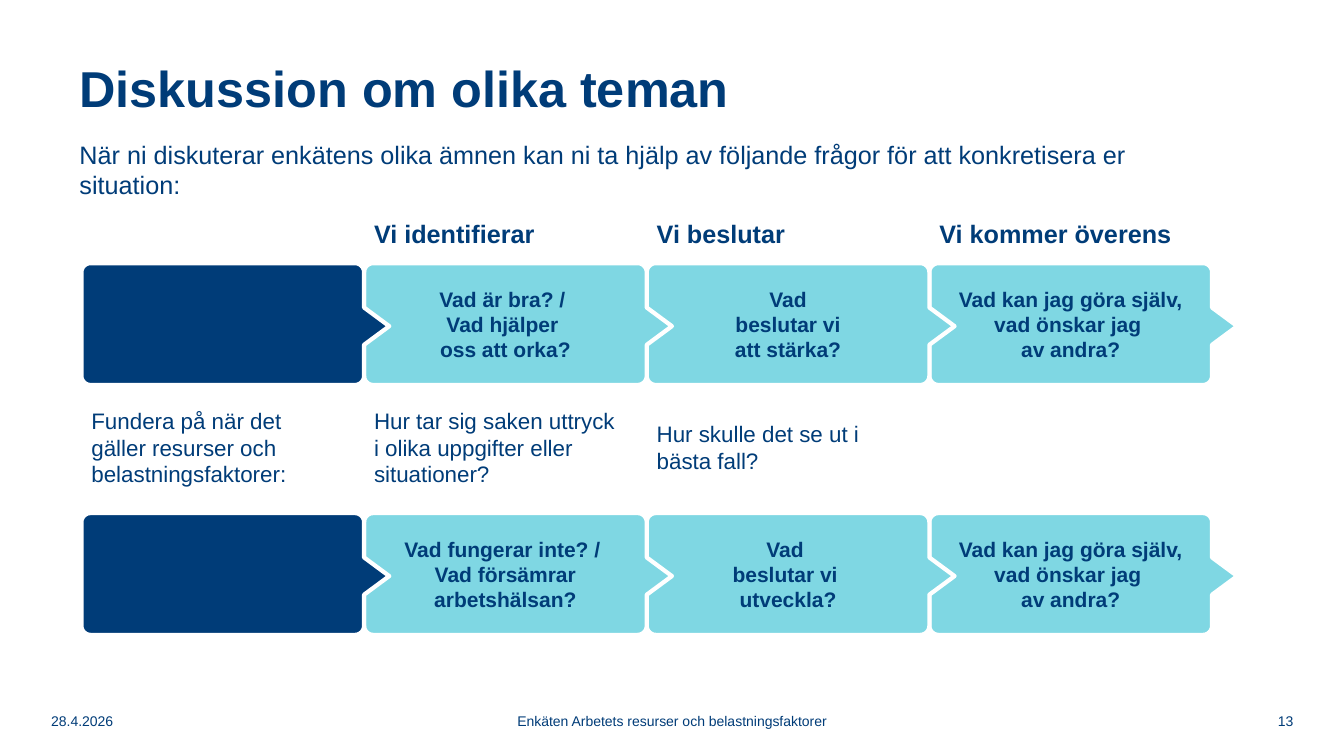
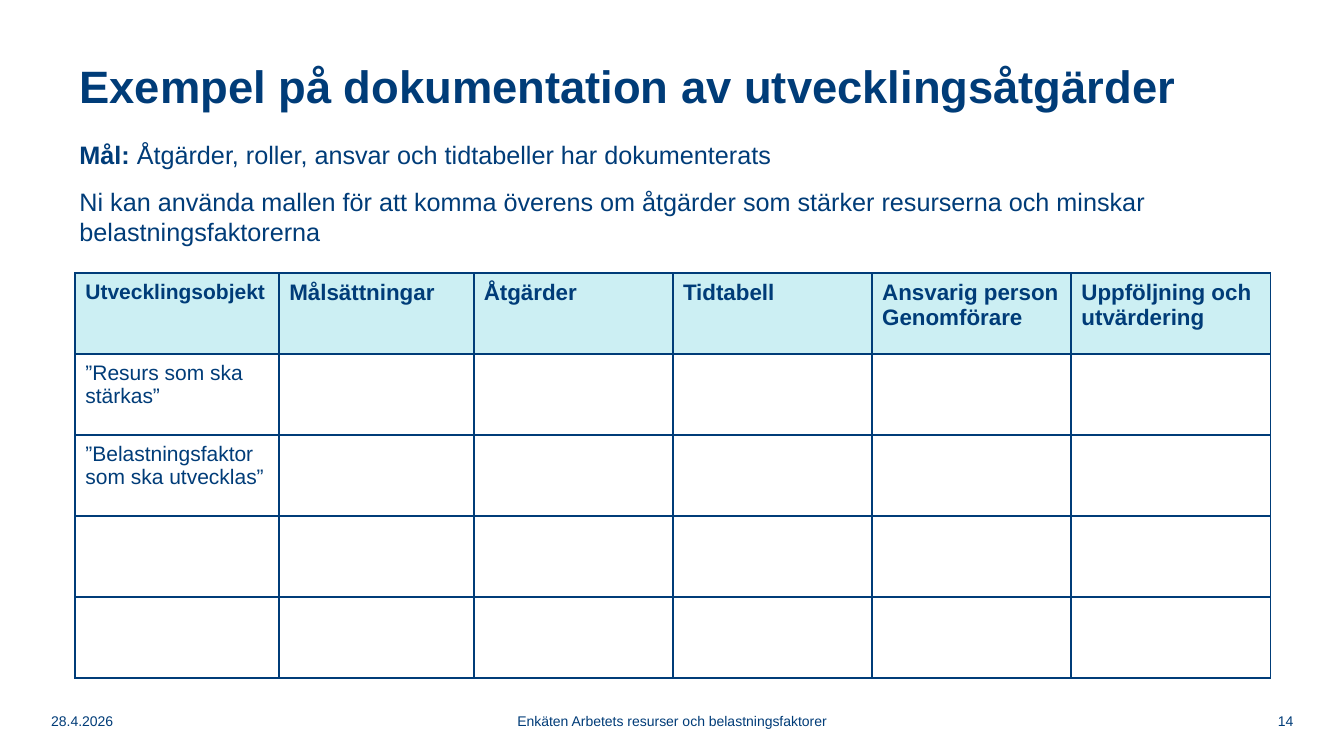
from dataclasses import dataclass
from math import cos, radians, sin
from typing import Optional

from lxml import etree
from pptx import Presentation
from pptx.dml.color import RGBColor
from pptx.enum.text import MSO_ANCHOR, PP_ALIGN
from pptx.oxml.ns import qn
from pptx.util import Pt

LEFT, CENTER, RIGHT = PP_ALIGN.LEFT, PP_ALIGN.CENTER, PP_ALIGN.RIGHT
TOP, MIDDLE = MSO_ANCHOR.TOP, MSO_ANCHOR.MIDDLE

# Shared look
FONT = "Arial"
NAVY, AQUA, PALE, WHITE = "003C78", "7FD7E3", "CCEFF3", "FFFFFF"
MARGIN = 49.7
DATE = "28.4.2026"
FOOTER = "Enkäten Arbetets resurser och belastningsfaktorer"

# Arrow grid
GRID_LEFT, PITCH = 58.2, 201.9
BOX_HEIGHT, RADIUS = 87, 6.5
TIP_LENGTH, TIP_HALF, TIP_MIDDLE = 18, 13.3, 45


@dataclass(frozen=True)
class Area:
    left: float
    top: float
    width: float
    height: float

    def points(self) -> tuple:
        return Pt(self.left), Pt(self.top), Pt(self.width), Pt(self.height)


@dataclass(frozen=True)
class TextStyle:
    size: float
    bold: bool = False
    align: PP_ALIGN = LEFT
    anchor: MSO_ANCHOR = TOP
    line_spacing: Optional[float] = None
    space_after: float = 0


@dataclass(frozen=True)
class ArrowRow:
    top: float
    questions: tuple[str, ...]


@dataclass(frozen=True)
class FooterPart:
    left: float
    width: float
    align: PP_ALIGN


BODY = TextStyle(18)
STEP_HEADING = TextStyle(18, bold=True)
QUESTION = TextStyle(15, bold=True, align=CENTER, anchor=MIDDLE)
HINT = TextStyle(16, anchor=MIDDLE)
FOOTER_PARTS = (
    FooterPart(29.5, 216, LEFT),
    FooterPart(318, 324, CENTER),
    FooterPart(715, 216, RIGHT),
)

# Content
STEP_HEADINGS = ("Vi identifierar", "Vi beslutar", "Vi kommer överens")
AGREEMENT = "Vad kan jag göra själv,\nvad önskar jag \nav andra?"
ARROW_ROWS = (
    ArrowRow(188, ("", "Vad är bra? / \nVad hjälper \noss att orka?",
                   "Vad\nbeslutar vi\natt stärka?", AGREEMENT)),
    ArrowRow(366.5, ("", "Vad fungerar inte? / \nVad försämrar\narbetshälsan?",
                     "Vad \nbeslutar vi \nutveckla?", AGREEMENT)),
)
HINTS = (
    "Fundera på när det gäller resurser och belastningsfaktorer:",
    "Hur tar sig saken uttryck i olika uppgifter eller situationer?",
    "Hur skulle det se ut i bästa fall?",
)
PLAN_HEADINGS = ("Utvecklingsobjekt", "Målsättningar", "Åtgärder", "Tidtabell",
                 "Ansvarig person\nGenomförare", "Uppföljning och utvärdering")
PLAN_OBJECTS = ("”Resurs som ska stärkas”",
                "”Belastningsfaktor som ska utvecklas”", "", "")
PLAN_WIDTHS = (145.7, 138.9, 142.3, 142.3, 142.3, 142.3)
PLAN_ROW_HEIGHT = 57.9


def rgb(color: str) -> RGBColor:
    return RGBColor.from_string(color)


def paint(target, color: str) -> None:
    target.fill.solid()
    target.fill.fore_color.rgb = rgb(color)


def format_run(run, size: float, bold: bool) -> None:
    run.font.name = FONT
    run.font.size = Pt(size)
    run.font.bold = bold
    run.font.color.rgb = rgb(NAVY)


def write(frame, text: str, style: TextStyle) -> None:
    frame.text = text
    frame.word_wrap = True
    frame.vertical_anchor = style.anchor
    for paragraph in frame.paragraphs:
        paragraph.alignment = style.align
        paragraph.space_after = Pt(style.space_after)
        if style.line_spacing:
            paragraph.line_spacing = style.line_spacing
        for run in paragraph.runs:
            format_run(run, style.size, style.bold)


def add_text(slide, area: Area, text: str, style: TextStyle):
    frame = slide.shapes.add_textbox(*area.points()).text_frame
    write(frame, text, style)
    return frame


def add_base(prs, title: str, title_size: float, number: int):
    """Blank slide with title and footer."""
    slide = prs.slides.add_slide(prs.slide_layouts[6])
    add_text(slide, Area(MARGIN, 42.5, 860.4, 59.8), title,
             TextStyle(title_size, bold=True, line_spacing=0.9))
    for part, text in zip(FOOTER_PARTS, (DATE, FOOTER, str(number))):
        add_text(slide, Area(part.left, 500.4, part.width, 28.8), text,
                 TextStyle(10, align=part.align, anchor=MIDDLE))
    return slide


def corner(x: float, y: float, start: int) -> list[tuple]:
    """Quarter circle around x, y, clockwise from the start angle."""
    angles = [radians(start + step) for step in range(0, 91, 15)]
    return [(Pt(x + RADIUS * cos(a)), Pt(y + RADIUS * sin(a))) for a in angles]


def add_arrow_box(slide, left: float, top: float, color: str, question: str) -> None:
    right, bottom, tip = left + PITCH, top + BOX_HEIGHT, top + TIP_MIDDLE
    outline = [
        *corner(right - RADIUS, top + RADIUS, 270),
        (Pt(right), Pt(tip - TIP_HALF)),
        (Pt(right + TIP_LENGTH), Pt(tip)),
        (Pt(right), Pt(tip + TIP_HALF)),
        *corner(right - RADIUS, bottom - RADIUS, 0),
        *corner(left + RADIUS, bottom - RADIUS, 90),
        *corner(left + RADIUS, top + RADIUS, 180),
    ]
    builder = slide.shapes.build_freeform(*outline[0])
    builder.add_line_segments(outline[1:], close=True)
    box = builder.convert_to_shape()
    box.shadow.inherit = False
    paint(box, color)
    box.line.color.rgb = rgb(WHITE)
    box.line.width = Pt(3)
    if question:
        box.text_frame.margin_right = Pt(25.2)
        write(box.text_frame, question, QUESTION)


def add_cell_borders(cell, color: str, width: float) -> None:
    properties = cell._tc.get_or_add_tcPr()
    for position, side in enumerate(("a:lnL", "a:lnR", "a:lnT", "a:lnB")):
        line = etree.Element(qn(side), w=str(Pt(width)))
        fill = etree.SubElement(line, qn("a:solidFill"))
        etree.SubElement(fill, qn("a:srgbClr"), val=color)
        properties.insert(position, line)


def build_discussion(prs) -> None:
    slide = add_base(prs, "Diskussion om olika teman", 36, 13)
    add_text(slide, Area(MARGIN, 95.8, 795.6, 51),
             "När ni diskuterar enkätens olika ämnen kan ni ta hjälp av följande "
             "frågor för att konkretisera er situation:", BODY)
    columns = [GRID_LEFT + index * PITCH for index in range(4)]
    for left, heading in zip(columns[1:], STEP_HEADINGS):
        add_text(slide, Area(left, 152.6, 188, 28.8), heading, STEP_HEADING)

    # Right to left, so that each tip overlaps the next box
    for row in ARROW_ROWS:
        for index in reversed(range(len(columns))):
            add_arrow_box(slide, columns[index], row.top,
                          AQUA if index else NAVY, row.questions[index])
    for left, hint in zip(columns, HINTS):
        add_text(slide, Area(left, 286.6, 188, 65.5), hint, HINT)


def build_plan(prs) -> None:
    slide = add_base(prs, "Exempel på dokumentation av utvecklingsåtgärder", 32.4, 14)

    # Goal and instruction
    intro = add_text(slide, Area(MARGIN, 95.8, 859, 85),
                     "Mål: \nNi kan använda mallen för att komma överens om åtgärder "
                     "som stärker resurserna och minskar belastningsfaktorerna",
                     TextStyle(18, space_after=12))
    goal = intro.paragraphs[0]
    goal.runs[0].font.bold = True
    goal_text = goal.add_run()
    goal_text.text = "Åtgärder, roller, ansvar och tidtabeller har dokumenterats"
    format_run(goal_text, 18, False)

    # Plan table
    blanks = ("",) * (len(PLAN_HEADINGS) - 1)
    rows = [PLAN_HEADINGS] + [(item, *blanks) for item in PLAN_OBJECTS]
    area = Area(53.8, 195, sum(PLAN_WIDTHS), PLAN_ROW_HEIGHT * len(rows))
    plan = slide.shapes.add_table(len(rows), len(PLAN_WIDTHS), *area.points()).table
    for column, width in zip(plan.columns, PLAN_WIDTHS):
        column.width = Pt(width)
    for row_index, texts in enumerate(rows):
        plan.rows[row_index].height = Pt(PLAN_ROW_HEIGHT)
        heading = row_index == 0
        for column_index, text in enumerate(texts):
            cell = plan.cell(row_index, column_index)
            cell.margin_top = Pt(5.4)
            paint(cell, PALE if heading else WHITE)
            add_cell_borders(cell, NAVY, 1.5)
            if text:
                write(cell.text_frame, text,
                      TextStyle(16 if column_index else 15, bold=heading))


def main() -> None:
    prs = Presentation()
    prs.slide_width, prs.slide_height = Pt(960), Pt(540)
    build_discussion(prs)
    build_plan(prs)
    prs.save("out.pptx")


if __name__ == "__main__":
    main()
